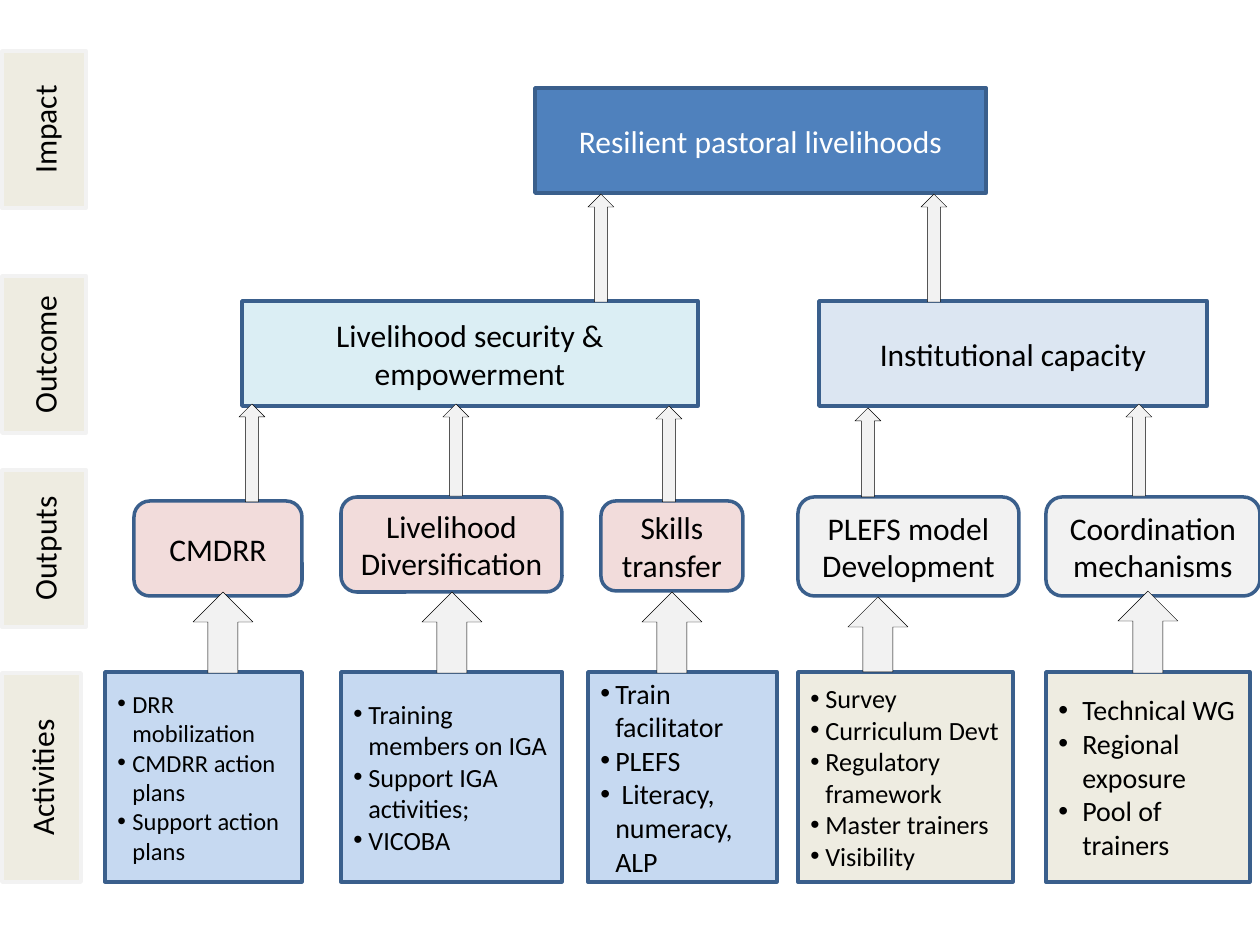
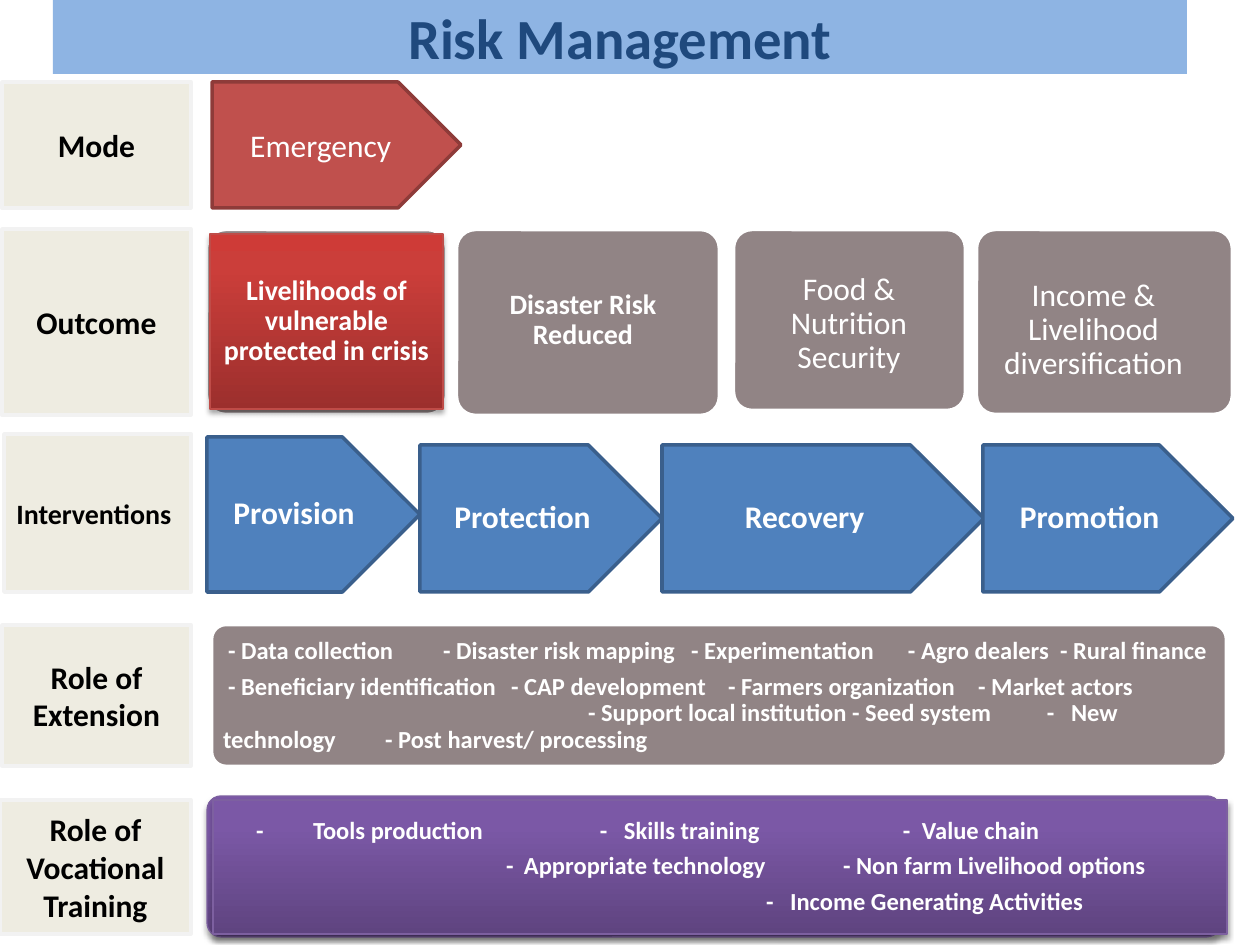
from lxml import etree
from pptx import Presentation
from pptx import util as u
from pptx.dml.color import RGBColor
from pptx.enum import shapes, text
from pptx.oxml.ns import qn

# Shared look
PX = 914400 // 126
FONT = "Calibri"
WHITE, BLACK = "FFFFFF", "000000"
BLUE, NAVY = "4F81BD", "3A5F8C"
CREAM, PALE = "EEECE1", "F2F2F2"
PINK, SKY, GREY = "F2DCDB", "C6D9F1", "918485"
RED_STOPS = ((0, "9C2F2D"), (80, "CB3E3A"), (100, "CE3B37"))
PURPLE_STOPS = ((0, "5F4480"), (80, "7B58A6"), (100, "7C57A8"))
KIND = shapes.MSO_SHAPE
CENTER, LEFT = text.PP_ALIGN.CENTER, text.PP_ALIGN.LEFT


def px(length):
    return u.Emu(length * PX)


def rgb(value):
    return RGBColor.from_string(value)


def child(parent, tag, **attributes):
    node = etree.SubElement(parent, qn(tag))
    for key, value in attributes.items():
        node.set(key, str(value))
    return node


# Shapes and their surface
def add_box(slide, at, fill=None, line=None, weight=2, kind=KIND.RECTANGLE):
    box = slide.shapes.add_shape(kind, *map(px, at))
    box.shadow.inherit = False
    if fill:
        box.fill.solid()
        box.fill.fore_color.rgb = rgb(fill)
    if line:
        box.line.color.rgb = rgb(line)
        box.line.width = u.Pt(weight)
    else:
        box.line.fill.background()
    return box


def add_glossy(slide, at, stops, line, kind=KIND.RECTANGLE):
    """Box with an upward gradient and a soft shadow below."""
    box = add_box(slide, at, None, line, 0.75, kind)
    box.fill.gradient()
    box.fill.gradient_angle = 90
    properties = box.element.spPr
    stop_list = properties.find(qn("a:gradFill")).find(qn("a:gsLst"))
    for old in list(stop_list):
        stop_list.remove(old)
    for percent, color in stops:
        stop = child(stop_list, "a:gs", pos=percent * 1000)
        child(stop, "a:srgbClr", val=color)
    shadow = child(properties.find(qn("a:effectLst")), "a:outerShdw", blurRad=u.Pt(3.1),
                   dist=u.Pt(1.8), dir=5400000, rotWithShape=0)
    child(child(shadow, "a:srgbClr", val=BLACK), "a:alpha", val=35000)
    return box


def add_rounded(slide, at):
    panel = add_box(slide, at, GREY, WHITE, 1.5, KIND.ROUNDED_RECTANGLE)
    panel.adjustments[0] = 0.1


# Text
def write(box, lines, size=18, color=BLACK, bold=False, align=CENTER,
          tight=False, bullet=0, tabs=()):
    """Fill a box; tabs holds one tuple of slide x positions for each line."""
    frame = box.text_frame
    frame.word_wrap = True
    frame.vertical_anchor = text.MSO_ANCHOR.MIDDLE
    frame.text = "\n".join(lines)
    for number, paragraph in enumerate(frame.paragraphs):
        paragraph.alignment = align
        properties = paragraph._p.get_or_add_pPr()
        if bullet:
            properties.set("marL", str(px(bullet)))
            properties.set("indent", str(-px(bullet)))
            child(properties, "a:buFont", typeface="Arial")
            child(properties, "a:buChar", char="•")
        if tabs:
            start = box.left + frame.margin_left
            stops = child(properties, "a:tabLst")
            for x in tabs[number]:
                child(stops, "a:tab", pos=px(x) - start, algn="l")
        if tight:
            paragraph.line_spacing = 0.9
            paragraph.space_after = u.Pt(round(size * 0.35))
        for run in paragraph.runs:
            font = run.font
            font.name, font.size, font.bold = FONT, u.Pt(size), bold
            font.color.rgb = rgb(color)


def trim(box):
    frame = box.text_frame
    frame.margin_left = frame.margin_right = px(5)
    frame.margin_top = frame.margin_bottom = px(5)
    return box


def add_caption(slide, at):
    return trim(slide.shapes.add_textbox(*map(px, at)))


def add_row_label(slide, at, label, size=18, bold=True, align=CENTER, upright=False):
    box = add_box(slide, at, CREAM, PALE)
    write(box, [label], size, bold=bold, align=align)
    if upright:
        box.text_frame._txBody.bodyPr.set("vert", "vert270")


# Slide 1: results chain
def build_results_chain(slide):
    # Impact and outcomes
    for at, fill, color, label in (
        ((535, 88, 451, 105), BLUE, WHITE, "Resilient pastoral livelihoods"),
        ((242, 301, 456, 105), "DBEEF4", BLACK, "Livelihood security & empowerment"),
        ((819, 301, 388, 105), "DCE6F2", BLACK, "Institutional capacity"),
    ):
        write(add_box(slide, at, fill, NAVY), [label], color=color)

    # Outputs
    for at, fill, label in (
        ((134, 501, 168, 95), PINK, "CMDRR"),
        ((341, 497, 221, 95), PINK, "Livelihood Diversification"),
        ((601, 501, 142, 90), PINK, "Skills transfer"),
        ((798, 497, 221, 99), PALE, "PLEFS model Development"),
        ((1046, 497, 214, 99), PALE, "Coordination mechanisms"),
    ):
        write(add_box(slide, at, fill, NAVY, kind=KIND.ROUNDED_RECTANGLE), [label])

    # Activities
    for x, width, fill, size, bullet, items in (
        (105, 197, SKY, 14, 15,
         ["DRR mobilization", "CMDRR action plans", "Support action plans"]),
        (341, 221, SKY, 15, 15,
         ["Training members on IGA", "Support IGA activities;", "VICOBA"]),
        (588, 189, SKY, 16, 15,
         ["Train facilitator", "PLEFS", " Literacy, numeracy, ALP"]),
        (798, 215, CREAM, 15, 15,
         ["Survey", "Curriculum Devt", "Regulatory framework", "Master trainers",
          "Visibility"]),
        (1046, 204, CREAM, 16, 24,
         ["Technical WG", "Regional exposure", "Pool of trainers"]),
    ):
        activity = add_box(slide, (x, 672, width, 210), fill, NAVY)
        write(activity, items, size, align=LEFT, bullet=bullet)

    # Arrows up to the next level: x, top, bottom
    thin = ((588, 194, 302), (921, 194, 302), (656, 406, 502), (443, 404, 496),
            (239, 404, 502), (1126, 404, 496), (855, 408, 497))
    wide = ((422, 592, 673), (193, 592, 673), (642, 592, 673), (1118, 591, 673),
            (848, 597, 672))
    for width, arrows in ((26, thin), (60, wide)):
        for x, top, bottom in arrows:
            add_box(slide, (x, top, width, bottom - top), PALE, BLACK, 0.25, KIND.UP_ARROW)

    # Level names
    for label, top, width, height in (
        ("Impact", 51, 84, 157), ("Outcome", 276, 84, 157),
        ("Outputs", 470, 84, 157), ("Activities", 673, 79, 209),
    ):
        add_row_label(slide, (2, top, width, height), label, bold=False, upright=True)


# Slide 2: risk management
def build_risk_management(slide):
    # Outcomes
    for panel, caption, size, bold, label in (
        ((457, 230, 262, 185), (465, 233, 236, 175), 16, True, "Disaster Risk Reduced"),
        ((734, 230, 231, 180), (737, 234, 224, 180), 18, False, "Food & Nutrition Security"),
        ((977, 230, 255, 184), (995, 246, 197, 169), 18, False,
         "Income & Livelihood diversification"),
    ):
        add_rounded(slide, panel)
        write(add_caption(slide, caption), [label], size, WHITE, bold, tight=True)
    add_rounded(slide, (207, 230, 239, 184))
    crisis = trim(add_glossy(slide, (210, 234, 233, 175), RED_STOPS, "BF4C48"))
    write(crisis, ["Livelihoods of vulnerable protected in crisis"], 16, WHITE, True, tight=True)

    # Mode
    emergency = add_box(slide, (212, 82, 249, 126), "C0504D", "8E3B39", kind=KIND.PENTAGON)
    write(emergency, ["Emergency"], color=WHITE)

    # Row names
    for label, at, size, align in (
        ("Mode", (2, 82, 189, 126), 18, CENTER),
        ("Outcome", (2, 229, 189, 186), 18, CENTER),
        ("Interventions", (4, 434, 187, 158), 16, LEFT),
        ("Role of Extension", (2, 625, 189, 141), 18, CENTER),
        ("Role of Vocational Training", (0, 800, 191, 134), 18, CENTER),
    ):
        add_row_label(slide, at, label, size, align=align)

    # Title band
    title = add_box(slide, (53, 0, 1134, 74), "8EB4E3")
    write(title, ["Risk Management"], 32.4, "1F497D", True)

    # Role of extension
    add_rounded(slide, (212, 625, 1014, 141))
    extension = add_caption(slide, (218, 629, 1014, 134))
    write(extension, [
        "\t- Data collection\t- Disaster risk mapping\t- Experimentation"
        "\t- Agro dealers\t- Rural finance",
        "\t- Beneficiary identification\t- CAP development"
        "\t- Farmers organization\t- Market actors",
        "\t\t- Support local institution - Seed system"
        "\t-\tNew technology\t- Post harvest/ processing",
    ], 14, WHITE, True, LEFT, tight=True, tabs=(
        (228, 443, 691, 908, 1060), (228, 511, 728, 978), (385, 588, 1047, 1071)))
    extension.text_frame.paragraphs[1].space_after = u.Pt(0)

    # Interventions
    for label, x, top, width in (
        ("Provision", 207, 437, 213), ("Protection", 420, 445, 242),
        ("Recovery", 662, 445, 322), ("Promotion", 983, 445, 250),
    ):
        step = add_box(slide, (x, top, width, 592 - top), BLUE, NAVY, kind=KIND.PENTAGON)
        write(step, [label], color=WHITE, bold=True, tight=True)

    # Role of vocational training
    backing = add_glossy(slide, (207, 796, 1014, 141), PURPLE_STOPS, "7D60A0",
                         KIND.ROUNDED_RECTANGLE)
    backing.adjustments[0] = 0.1
    training = trim(add_glossy(slide, (213, 800, 1014, 134), PURPLE_STOPS, "7D60A0"))
    write(training, [
        "\t-\tTools production\t-\tSkills training\t-\tValue chain",
        "\t-\tAppropriate technology\t- Non farm Livelihood options",
        "\t-\tIncome Generating Activities",
    ], 14, WHITE, True, LEFT, tight=True, tabs=(
        (256, 313, 600, 624, 903, 922), (506, 524, 843), (766, 790)))


def main():
    deck = Presentation()
    deck.slide_width, deck.slide_height = px(1260), px(945)
    blank = deck.slide_layouts[6]
    for build in (build_results_chain, build_risk_management):
        build(deck.slides.add_slide(blank))
    deck.save("out.pptx")


if __name__ == "__main__":
    main()
